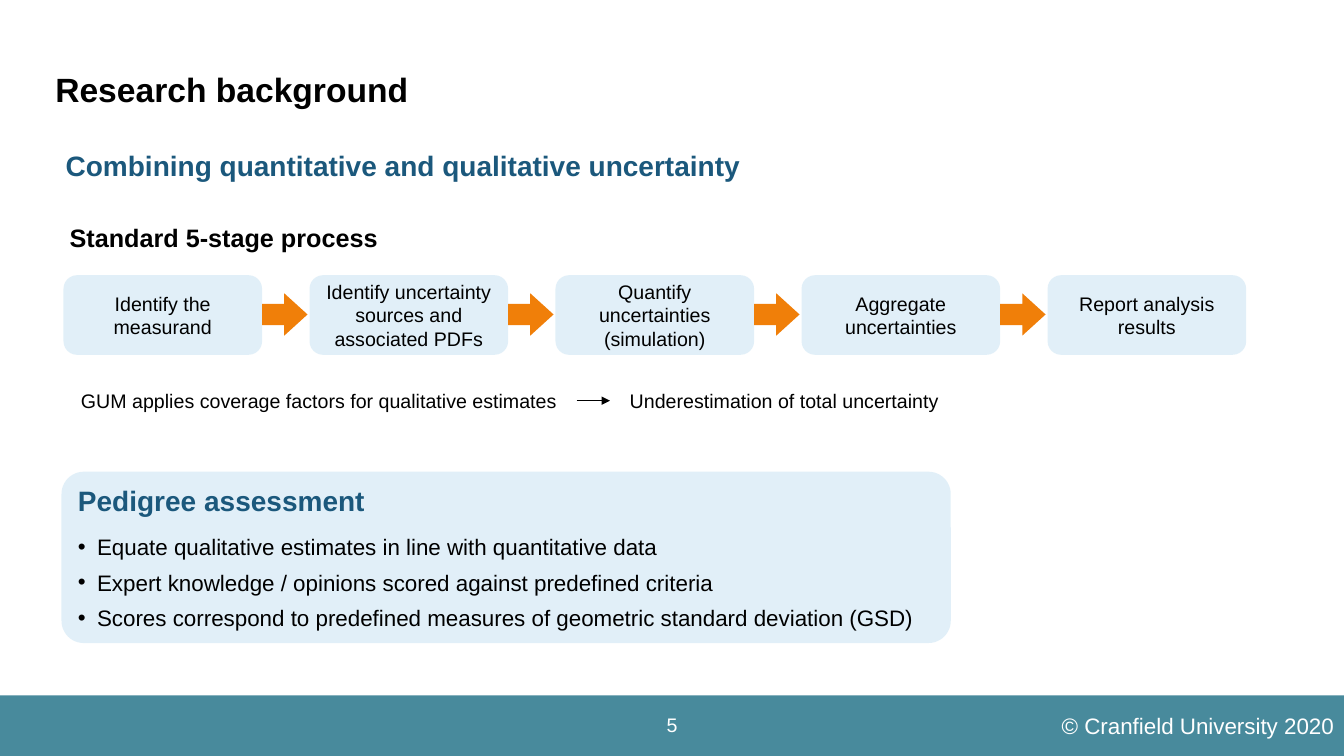
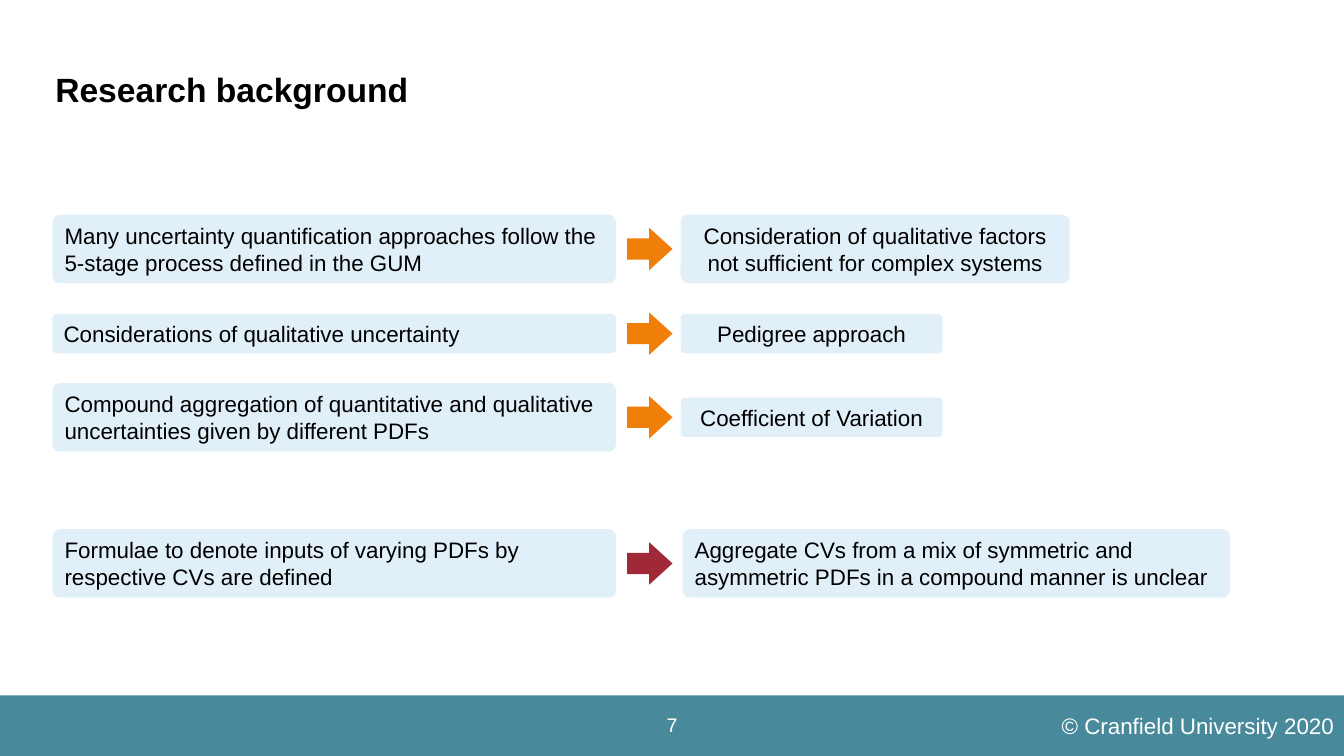
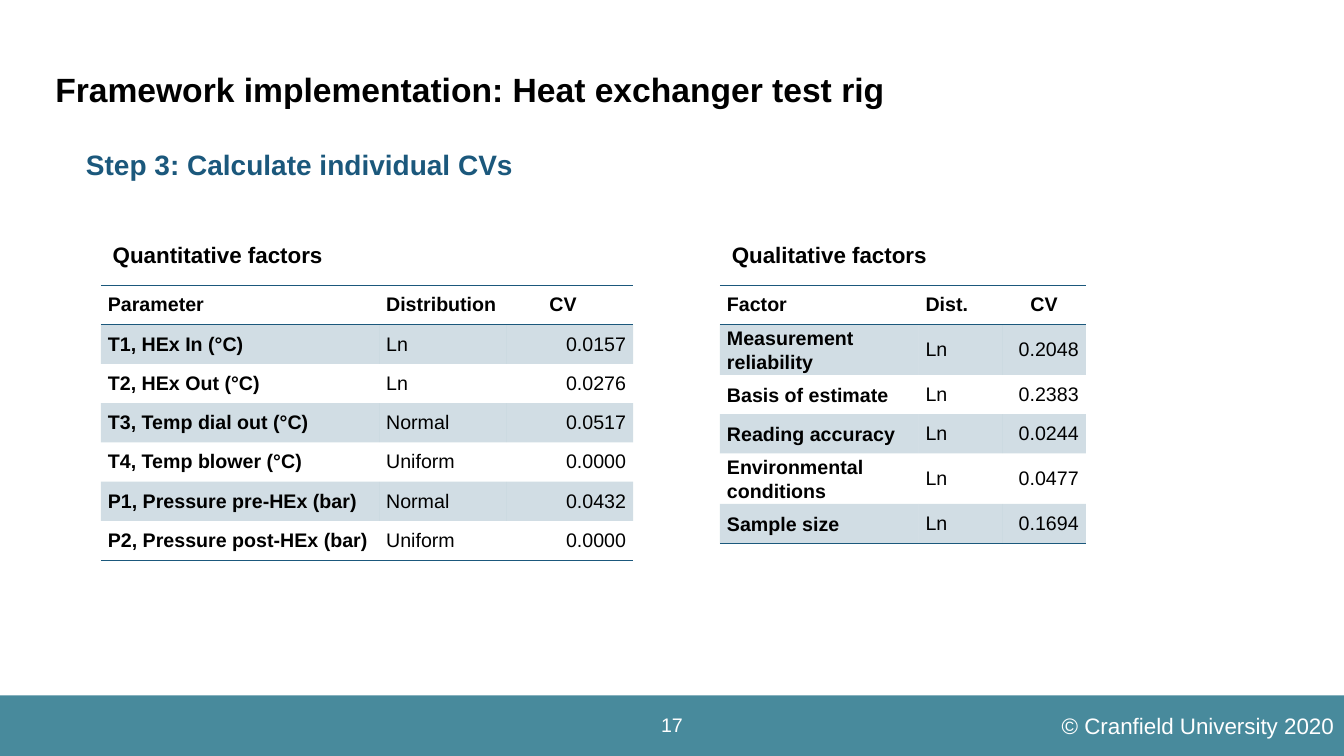
import dataclasses

import pptx
import pptx.dml.color
import pptx.enum.shapes
import pptx.enum.text
import pptx.oxml
import pptx.oxml.ns
import pptx.util

Inches = pptx.util.Inches
SHAPE = pptx.enum.shapes.MSO_SHAPE
ALIGN = pptx.enum.text.PP_ALIGN
ANCHOR = pptx.enum.text.MSO_ANCHOR
NO_STYLE_NO_GRID = "{2D5ABB26-0587-4C30-8999-92F81FD0307C}"


@dataclasses.dataclass(frozen=True)
class Theme:
    font: str = "Arial"
    ink: str = "000000"
    paper: str = "FFFFFF"
    band: str = "488A9C"
    navy: str = "1B587C"
    sky: str = "C4E1F2"
    orange: str = "F07F09"
    red: str = "9F2936"
    title: int = 24
    heading: int = 20
    subheading: int = 18
    body: int = 16
    small: int = 14


THEME = Theme()


def rgb(color):
    return pptx.dml.color.RGBColor.from_string(color)


def add_xml(parent, tag, **attributes):
    element = pptx.oxml.ns.qn(tag)
    child = parent.makeelement(element, attributes)
    parent.append(child)
    return child


def paint(fill, color, opacity=100):
    """Fill with a solid colour; opacity is in percent."""
    fill.solid()
    fill.fore_color.rgb = rgb(color)
    if opacity < 100:
        solid = fill._xPr.find(pptx.oxml.ns.qn("a:solidFill"))
        add_xml(solid[0], "a:alpha", val=str(opacity * 1000))


def write(paragraph, text, size=THEME.body, color=THEME.ink, bold=False,
          align=ALIGN.LEFT, after=0, spacing=None, bullet=False):
    """Put one formatted run of text into a paragraph."""
    if bullet:
        properties = paragraph._p.get_or_add_pPr()
        indent = Inches(0.19)
        properties.set("marL", str(indent))
        properties.set("indent", str(-indent))
        add_xml(properties, "a:buFont", typeface=THEME.font)
        add_xml(properties, "a:buChar", char="•")
    paragraph.alignment = align
    paragraph.space_after = pptx.util.Pt(after)
    if spacing:
        paragraph.line_spacing = spacing
    run = paragraph.add_run()
    run.text = text
    run.font.name = THEME.font
    run.font.size = pptx.util.Pt(size)
    run.font.bold = bold
    run.font.color.rgb = rgb(color)


def add_shape(slide, kind, box, fill, opacity=100, adjustments=()):
    shape = slide.shapes.add_shape(kind, *map(Inches, box))
    shape.shadow.inherit = False
    paint(shape.fill, fill, opacity)
    shape.line.fill.background()
    for index, value in enumerate(adjustments):
        shape.adjustments[index] = value
    return shape


def add_label(slide, box, text, anchor=ANCHOR.MIDDLE, **style):
    label = slide.shapes.add_textbox(*map(Inches, box))
    label.text_frame.word_wrap = True
    label.text_frame.vertical_anchor = anchor
    write(label.text_frame.paragraphs[0], text, **style)


def add_card(slide, box, text, fill=THEME.sky, opacity=50, rounding=0.17,
             anchor=ANCHOR.MIDDLE, **style):
    """Rounded box with text."""
    card = add_shape(slide, SHAPE.ROUNDED_RECTANGLE, box, fill, opacity, [rounding])
    card.text_frame.word_wrap = True
    card.text_frame.vertical_anchor = anchor
    write(card.text_frame.paragraphs[0], text, **style)
    return card


def add_heading(slide, box, text, **style):
    return add_card(slide, box, text, THEME.paper, 100, anchor=ANCHOR.TOP,
                    bold=True, **style)


def add_block_arrow(slide, left, top, fill=THEME.orange):
    add_shape(slide, SHAPE.RIGHT_ARROW, (left, top, 0.45, 0.42), fill,
              adjustments=[0.5, 0.55])


def add_link(slide, source, target):
    """Thin arrow from the right side of one box to the left side of another."""
    link = slide.shapes.add_connector(
        pptx.enum.shapes.MSO_CONNECTOR.STRAIGHT, 0, 0, 0, 0)
    link.begin_connect(source, 3)
    link.end_connect(target, 1)
    link.line.color.rgb = rgb(THEME.ink)
    link.line.width = pptx.util.Pt(0.5)
    add_xml(link.line._get_or_add_ln(), "a:tailEnd", type="triangle")
    add_xml(link._element.spPr, "a:effectLst")


def add_rule(cell, side):
    """Draw a cell border; side is T or B."""
    border = add_xml(cell._tc.get_or_add_tcPr(), f"a:ln{side}",
                     w=str(pptx.util.Pt(1)))
    add_xml(add_xml(border, "a:solidFill"), "a:srgbClr", val=THEME.navy)


def add_factor_table(slide, left, widths, rows, cv_inset=0.07, name_spacing=None):
    """Ruled table with shaded odd rows; cv_inset is the right margin of the CV heading."""
    row_height = 0.39
    table = slide.shapes.add_table(
        len(rows), len(widths), Inches(left), Inches(2.83),
        Inches(sum(widths)), Inches(row_height * len(rows))).table
    table.first_row = table.horz_banding = False
    table._tbl.tblPr.find(pptx.oxml.ns.qn("a:tableStyleId")).text = NO_STYLE_NO_GRID
    for column, width in zip(table.columns, widths):
        column.width = Inches(width)
    for r, row in enumerate(rows):
        table.rows[r].height = Inches(row_height)
        is_header = r == 0
        for c, text in enumerate(row):
            cell = table.cell(r, c)
            is_cv = c == len(row) - 1
            cell.vertical_anchor = ANCHOR.MIDDLE
            cell.margin_left = Inches(0.07)
            cell.margin_right = Inches(cv_inset if is_header and is_cv else 0.07)
            cell.margin_top = cell.margin_bottom = 0
            if is_header:
                add_rule(cell, "T")
            if is_header or r == len(rows) - 1:
                add_rule(cell, "B")
            if r % 2:
                paint(cell.fill, THEME.navy, 20)
            else:
                cell.fill.background()
            cv_align = ALIGN.CENTER if is_header else ALIGN.RIGHT
            write(cell.text_frame.paragraphs[0], text, size=THEME.small,
                  bold=is_header or c == 0, align=cv_align if is_cv else ALIGN.LEFT,
                  spacing=name_spacing if c == 0 and not is_header else None)


def add_slide(deck, title, number):
    """Blank slide with the shared title, band and footer."""
    slide = deck.slides.add_slide(deck.slide_layouts[6])
    add_shape(slide, SHAPE.RECTANGLE, (0, 6.9, 13.33, 0.6), THEME.band)
    add_label(slide, (6.39, 7.01, 0.55, 0.36), str(number), size=THEME.small,
              color=THEME.paper, align=ALIGN.CENTER)
    add_label(slide, (9.13, 7.02, 4.2, 0.37), "© Cranfield University 2020",
              anchor=ANCHOR.TOP, color=THEME.paper, align=ALIGN.RIGHT)
    add_label(slide, (0.45, 0.44, 11.34, 0.94), title, size=THEME.title,
              bold=True, spacing=0.9)
    return slide


def build_process_slide(deck):
    slide = add_slide(deck, "Research background", 5)
    add_heading(slide, (0.52, 1.39, 7.09, 0.5),
                "Combining quantitative and qualitative uncertainty",
                rounding=0.22, size=THEME.heading, color=THEME.navy)
    process_heading = add_card(
        slide, (0.63, 2.14, 3.23, 0.43), "Standard 5-stage process",
        THEME.paper, 100, size=THEME.subheading, bold=True)
    process_heading.text_frame.margin_left = Inches(0.04)
    process_heading.text_frame.margin_right = Inches(0.04)

    stages = [
        "Identify the measurand",
        "Identify uncertainty sources and associated PDFs",
        "Quantify uncertainties (simulation)",
        "Aggregate uncertainties",
        "Report analysis results",
    ]
    pitch, stage_width = 2.44, 1.97
    for i, stage in enumerate(stages):
        left = 0.63 + i * pitch
        add_card(slide, (left, 2.73, stage_width, 0.79), stage,
                 size=THEME.small, align=ALIGN.CENTER)
        if i < len(stages) - 1:
            add_block_arrow(slide, left + stage_width, 2.91)

    practice, consequence = (
        add_card(slide, (left, 3.78, width, 0.39), text, THEME.paper,
                 size=THEME.small, align=ALIGN.CENTER)
        for left, width, text in [
            (0.61, 5.11, "GUM applies coverage factors for qualitative estimates"),
            (6.05, 3.46, "Underestimation of total uncertainty"),
        ])
    add_link(slide, practice, consequence)

    pedigree = add_card(slide, (0.61, 4.68, 8.82, 1.7), "Pedigree assessment",
                        rounding=0.13, anchor=ANCHOR.TOP, size=THEME.heading,
                        color=THEME.navy, bold=True, after=12)
    for point in [
        "Equate qualitative estimates in line with quantitative data",
        "Expert knowledge / opinions scored against predefined criteria",
        "Scores correspond to predefined measures of geometric standard deviation (GSD)",
    ]:
        write(pedigree.text_frame.add_paragraph(), point, after=6, bullet=True)


def build_gap_slide(deck):
    slide = add_slide(deck, "Research background", 7)
    one_line, two_lines = 0.39, 0.68
    findings = [
        (2.47, two_lines, "Many uncertainty quantification approaches follow the "
         "5-stage process defined in the GUM",
         (6.75, 3.86, two_lines), "Consideration of qualitative factors not "
         "sufficient for complex systems", ALIGN.CENTER, THEME.orange),
        (3.31, one_line, "Considerations of qualitative uncertainty",
         (6.75, 2.6, one_line), "Pedigree approach", ALIGN.CENTER, THEME.orange),
        (4.14, two_lines, "Compound aggregation of quantitative and qualitative "
         "uncertainties given by different PDFs",
         (6.75, 2.6, one_line), "Coefficient of Variation", ALIGN.CENTER, THEME.orange),
        (5.59, two_lines, "Formulae to denote inputs of varying PDFs by "
         "respective CVs are defined",
         (6.77, 5.43, two_lines), "Aggregate CVs from a mix of symmetric and "
         "asymmetric PDFs in a compound manner is unclear", ALIGN.LEFT, THEME.red),
    ]
    for middle, height, finding, outcome_box, outcome, align, arrow_fill in findings:
        left, width, outcome_height = outcome_box
        add_card(slide, (0.52, middle - height / 2, 5.59, height), finding,
                 rounding=0.11, anchor=ANCHOR.TOP)
        add_card(slide, (left, middle - outcome_height / 2, width, outcome_height),
                 outcome, rounding=0.11, anchor=ANCHOR.TOP, align=align)
        add_block_arrow(slide, 6.22, middle - 0.21, arrow_fill)


def build_cv_slide(deck):
    slide = add_slide(deck, "Framework implementation: Heat exchanger test rig", 17)
    add_heading(slide, (0.73, 1.39, 5.15, 0.48), "Step 3: Calculate individual CVs",
                size=THEME.heading, color=THEME.navy)
    quantitative_left, qualitative_left = 1, 7.14
    for left, heading in [(quantitative_left, "Quantitative factors"),
                          (qualitative_left, "Qualitative factors")]:
        add_heading(slide, (left, 2.32, 2.6, 0.41), heading)
    add_factor_table(slide, quantitative_left, [2.76, 1.26, 1.26], [
        ("Parameter", "Distribution", "CV"),
        ("T1, HEx In (°C)", "Ln", "0.0157"),
        ("T2, HEx Out (°C)", "Ln", "0.0276"),
        ("T3, Temp dial out (°C)", "Normal", "0.0517"),
        ("T4, Temp blower (°C)", "Uniform", "0.0000"),
        ("P1, Pressure pre-HEx (bar)", "Normal", "0.0432"),
        ("P2, Pressure post-HEx (bar)", "Uniform", "0.0000"),
    ], cv_inset=0.2)
    add_factor_table(slide, qualitative_left, [1.97, 0.83, 0.83], [
        ("Factor", "Dist.", "CV"),
        ("Measurement reliability", "Ln", "0.2048"),
        ("Basis of estimate", "Ln", "0.2383"),
        ("Reading accuracy", "Ln", "0.0244"),
        ("Environmental conditions", "Ln", "0.0477"),
        ("Sample size", "Ln", "0.1694"),
    ], name_spacing=1.07)


def main():
    deck = pptx.Presentation()
    deck.slide_width = Inches(13.33)
    deck.slide_height = Inches(7.5)
    build_process_slide(deck)
    build_gap_slide(deck)
    build_cv_slide(deck)
    deck.save("out.pptx")


if __name__ == "__main__":
    main()
